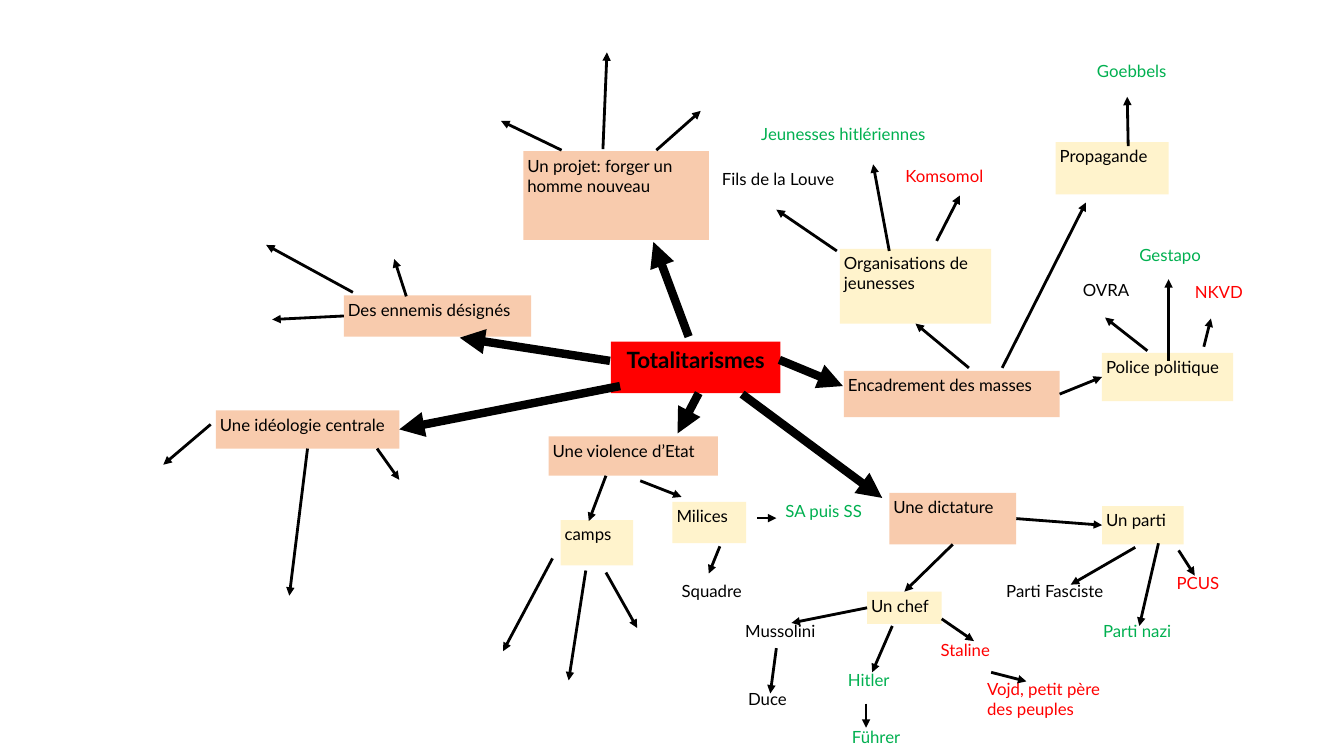
from lxml.etree import SubElement
from pptx import Presentation
from pptx.dml.color import RGBColor
from pptx.enum.shapes import MSO_CONNECTOR, MSO_SHAPE
from pptx.enum.text import MSO_ANCHOR, MSO_AUTO_SIZE, PP_ALIGN
from pptx.oxml.ns import qn
from pptx.util import Inches, Pt

BLACK = RGBColor(0x00, 0x00, 0x00)
RED = RGBColor(0xFF, 0x00, 0x00)
GREEN = RGBColor(0x00, 0xB0, 0x50)
PEACH = RGBColor(0xF8, 0xCB, 0xAD)
CREAM = RGBColor(0xFF, 0xF3, 0xCC)

CELL = 0.1  # the grid has square cells, a tenth of an inch wide
TOP, LEFT, BOTTOM, RIGHT = range(4)

THEMES = {
    "Encadrement des masses": (83.7, 36.8, 21.4, 4.6),
    "Une dictature": (88.2, 48.9, 12.6, 5.1),
    "Une violence d’Etat": (54.4, 43.3, 16.8, 3.9),
    "Un projet: forger un homme nouveau": (51.9, 15, 18.4, 8.8),
    "Une idéologie centrale": (21.4, 40.7, 18.2, 3.8),
    "Des ennemis désignés": (34.1, 29.3, 18.6, 4.1),
}
MEANS = {
    "Police politique": (109.3, 35, 13, 4.8),
    "Propagande": (104.7, 14.1, 11.2, 5.2),
    "Organisations de jeunesses": (83.3, 24.7, 15, 7.4),
    "Un parti": (109.3, 50.2, 8.1, 3.8),
    "Un chef": (86, 58.7, 7.4, 3.2),
    "Milices": (66.7, 49.8, 7.3, 4.1),
    "camps": (55.6, 51.6, 7.2, 4.5),
}
ITALY = {
    "Fils de la Louve": (71.2, 16.3, 12.9, 4.5),
    "OVRA": (107, 27.3, 5.9, 4.2),
    "Parti Fasciste": (99.4, 57.2, 14.4, 4),
    "Mussolini": (73.5, 61.2, 10.2, 3.5),
    "Duce": (73.8, 67.9, 7.3, 3.9),
    "Squadre": (67.2, 57.2, 9, 3.6),
}
GERMANY = {
    "Jeunesses hitlériennes": (75.1, 11.9, 20.2, 4.2),
    "Goebbels": (108.4, 5.6, 9, 3.6),
    "Gestapo": (112.6, 23.9, 7.3, 3.8),
    "Parti nazi": (109, 61.2, 11, 3.8),
    "Hitler": (83.7, 66, 7.3, 3.9),
    "Führer": (84.1, 71.7, 7.3, 3.3),
    "SA puis SS": (77.5, 49.3, 9, 3.6),
}
USSR = {
    "Komsomol": (89.4, 16, 12.6, 3.6),
    "NKVD": (118.1, 27.5, 5.9, 4.2),
    "PCUS": (116.3, 56.4, 7.3, 3.9),
    "Staline": (92.9, 63.1, 7.3, 3.9),
    "Vojd, petit père\ndes peuples": (97.5, 66.9, 14.6, 8),
}

# An arrow end is a grid point, or a box and the side it is joined to.
MAIN_ARROWS = [
    ((68.3, 33.4), (64.8, 24)),
    ((60.5, 35.8), (45.6, 33.5)),
    ((61.5, 38.3), ("Une idéologie centrale", RIGHT)),
    ((69.3, 39), (67.2, 43)),
    ((73.6, 39.1), (87.5, 49.4)),
    ((77.3, 35.7), (83.6, 38.3)),
]
BRANCH_ARROWS = [
    # Encadrement des masses
    ((96.1, 36.5), ("Organisations de jeunesses", BOTTOM)),
    ((99.4, 36.5), (107.7, 20.1)),
    (("Encadrement des masses", RIGHT), ("Police politique", LEFT)),
    ((83, 24.9), (77, 20.8)),
    ((88.2, 24.9), (86.6, 16.3)),
    ((92.9, 23.9), (95.2, 19.4)),
    ((111.9, 14.5), (111.8, 9.6)),
    ((113.8, 34.8), (109.6, 31.5)),
    ((115.9, 35.8), (115.9, 27.7)),
    ((119.4, 34.4), (120.1, 31.6)),
    # Une dictature
    (("Une dictature", RIGHT), ("Un parti", LEFT)),
    (("Une dictature", BOTTOM), ("Un chef", TOP)),
    ((112.6, 54.3), (106.2, 58)),
    ((114.9, 53.9), (113, 62.1)),
    ((116.9, 54.6), (118.5, 57.1)),
    (("Un chef", LEFT), (78.5, 61.8)),
    ((88.5, 62.1), (86.5, 66.7)),
    ((93.4, 61.4), (96.6, 63.6)),
    ((98.3, 66.7), (101.8, 67.6)),
    ((85.9, 69.8), (85.9, 72.2)),
    ((77, 64.3), (76.4, 68.8)),
    # Une violence d’Etat
    ((63.5, 47.7), (67.6, 49.3)),
    ((60.1, 47.2), (58.4, 51.7)),
    ((54.8, 55.4), (49.9, 64.6)),
    ((58.1, 56.6), (56.4, 67.5)),
    ((60.1, 56.8), (63.2, 62.3)),
    ((71.4, 54.2), (70.3, 56.9)),
    ((75.1, 51.4), (77, 51.4)),
    # Un projet
    ((65.1, 14.9), (69.5, 11)),
    ((59.8, 14.8), (60.2, 5.2)),
    ((55.7, 14.9), (49.7, 12)),
    # Des ennemis désignés
    ((40.3, 29.4), (39.1, 25.7)),
    ((35, 29), (26.4, 24.3)),
    (("Des ennemis désignés", LEFT), (27, 31.7)),
    # Une idéologie centrale
    ((20.9, 42.1), (16.2, 46.1)),
    (("Une idéologie centrale", BOTTOM), (28.7, 59.1)),
    ((37.4, 44.5), (39.6, 47.6)),
]


def cells(*counts):
    return [Inches(count * CELL) for count in counts]


def write(shape, text, size=12, color=BLACK, bold=False, align=PP_ALIGN.LEFT):
    frame = shape.text_frame
    frame.text = text
    frame.word_wrap = True
    frame.auto_size = MSO_AUTO_SIZE.NONE
    frame.vertical_anchor = MSO_ANCHOR.TOP
    frame.margin_left = frame.margin_right = Inches(0.04)
    frame.margin_top = frame.margin_bottom = Inches(0.04)
    for paragraph in frame.paragraphs:
        paragraph.alignment = align
        for run in paragraph.runs:
            run.font.name = "Lato"
            run.font.size = Pt(size)
            run.font.bold = bold
            run.font.color.rgb = color


class MindMap:
    def __init__(self, slide):
        self.slide = slide
        self.boxes = {}

    def title(self, text, place, fill):
        heading = self.slide.shapes.title
        heading.left, heading.top, heading.width, heading.height = cells(*place)
        heading.fill.solid()
        heading.fill.fore_color.rgb = fill
        write(heading, text, size=16, bold=True, align=PP_ALIGN.CENTER)

    def box(self, text, place, fill):
        box = self.slide.shapes.add_shape(MSO_SHAPE.RECTANGLE, *cells(*place))
        box.shadow.inherit = False
        box.fill.solid()
        box.fill.fore_color.rgb = fill
        box.line.fill.background()
        write(box, text)
        self.boxes[text] = box

    def label(self, text, place, color):
        write(self.slide.shapes.add_textbox(*cells(*place)), text, color=color)

    def arrow(self, start, end, weight):
        points = [(0, 0) if target[0] in self.boxes else target
                  for target in (start, end)]
        arrow = self.slide.shapes.add_connector(
            MSO_CONNECTOR.STRAIGHT, *cells(*points[0], *points[1]))
        for target, join in ((start, arrow.begin_connect), (end, arrow.end_connect)):
            if target[0] in self.boxes:
                join(self.boxes[target[0]], target[1])
        arrow.line.color.rgb = BLACK
        arrow.line.width = Pt(weight)
        SubElement(arrow.line._get_or_add_ln(), qn("a:tailEnd"), type="triangle")
        SubElement(arrow._element.spPr, qn("a:effectLst"))


def main():
    presentation = Presentation()
    presentation.slide_width = Inches(13.33)
    presentation.slide_height = Inches(7.5)
    title_only = presentation.slide_layouts[5]
    mind_map = MindMap(presentation.slides.add_slide(title_only))

    mind_map.title("Totalitarismes", (60.6, 33.9, 16.8, 5.1), RED)
    for branches, fill in ((THEMES, PEACH), (MEANS, CREAM)):
        for text, place in branches.items():
            mind_map.box(text, place, fill)
    for examples, color in ((ITALY, BLACK), (GERMANY, GREEN), (USSR, RED)):
        for text, place in examples.items():
            mind_map.label(text, place, color)
    for arrows, weight in ((BRANCH_ARROWS, 2), (MAIN_ARROWS, 6)):
        for start, end in arrows:
            mind_map.arrow(start, end, weight)

    presentation.save("out.pptx")


if __name__ == "__main__":
    main()
